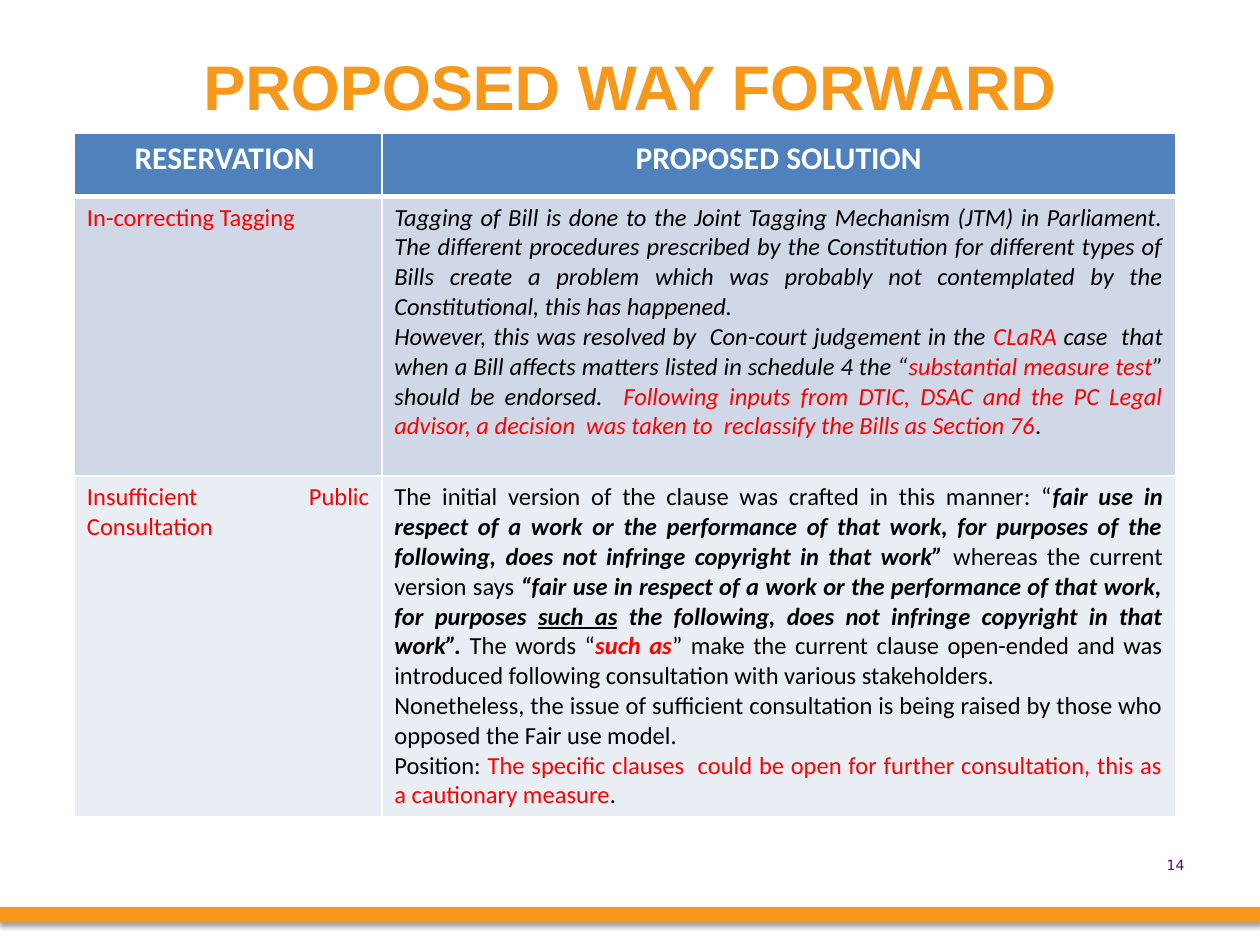
import pptx
import pptx.util
import pptx.dml.color
import pptx.enum.shapes
import pptx.enum.text
import pptx.oxml
import pptx.oxml.ns

Inches = pptx.util.Inches
Pt = pptx.util.Pt
Align = pptx.enum.text.PP_ALIGN
Anchor = pptx.enum.text.MSO_ANCHOR
NS = pptx.oxml.ns.nsdecls("a")

COLORS = {
    "orange": "F5981B", "white": "FFFFFF", "black": "000000", "red": "FF0000",
    "purple": "660066", "head": "4F81BD", "dark": "D0D8E8", "light": "E9EDF4",
}


def color(name):
    return pptx.dml.color.RGBColor.from_string(COLORS[name])


def write(frame, paras, size, face, tint, align, bold=False):
    """Fill a frame; run marks: b bold, i italic, u underline, r red."""
    frame.word_wrap = True
    for n, runs in enumerate(paras):
        para = frame.paragraphs[0] if n == 0 else frame.add_paragraph()
        para.alignment = align
        para.font.size = Pt(size)
        para.font.name = face
        para.font.bold = bold
        para.font.color.rgb = color(tint)
        for text, marks in runs:
            run = para.add_run()
            run.text = text
            font = run.font
            font.size = Pt(size)
            font.name = face
            font.bold = bold or "b" in marks
            font.italic = "i" in marks
            font.underline = "u" in marks
            font.color.rgb = color("red" if "r" in marks else tint)


deck = pptx.Presentation()
deck.slide_width = Inches(10)
deck.slide_height = Inches(7.5)
slide = deck.slides.add_slide(deck.slide_layouts[6])
shapes = slide.shapes

# Footer bar with a soft shadow
bar = shapes.add_shape(pptx.enum.shapes.MSO_SHAPE.RECTANGLE,
                       Inches(0), Inches(7.2), Inches(10), Inches(0.12))
bar.fill.solid()
bar.fill.fore_color.rgb = color("orange")
bar.line.fill.background()
bar.shadow.inherit = False
glow = bar.element.spPr.find(pptx.oxml.ns.qn("a:effectLst"))
glow.append(pptx.oxml.parse_xml(
    f'<a:outerShdw {NS} blurRad="{Pt(3.1)}" dist="{Pt(1.6)}" dir="5400000" '
    f'rotWithShape="0"><a:srgbClr val="{COLORS["black"]}">'
    '<a:alpha val="38000"/></a:srgbClr></a:outerShdw>'))

# Title
title = shapes.add_textbox(Inches(0.5), Inches(0.29), Inches(9), Inches(0.78))
title.text_frame.vertical_anchor = Anchor.MIDDLE
write(title.text_frame, [[("PROPOSED WAY FORWARD", "")]],
      36, "Arial", "orange", Align.CENTER, True)

# Table text: rows of cells, cells of paragraphs, paragraphs of runs
rows = [
    [[[("RESERVATION ", "")]], [[("PROPOSED SOLUTION", "")]]],
    [
        [[("In-correcting Tagging ", "r")]],
        [
            [("Tagging of Bill is done to the Joint Tagging Mechanism (JTM) in "
              "Parliament. The different procedures prescribed by the Constitution "
              "for different types of Bills create a problem which was probably not "
              "contemplated by the Constitutional, this has happened.  ", "i")],
            [("However, this was resolved by  Con-court judgement in the ", "i"),
             ("CLaRA", "ir"),
             (" case  that when a Bill affects matters listed in schedule 4 the “", "i"),
             ("substantial measure test", "ir"),
             ("” should be endorsed.  ", "i"),
             ("Following inputs from DTIC, DSAC and the PC Legal advisor, a decision  "
              "was taken to  reclassify the Bills as Section 76", "ir"),
             (". ", "i")],
        ],
    ],
    [
        [[("Insufficient Public Consultation", "r")]],
        [
            [("The initial version of the clause was crafted in this manner: “", ""),
             ("fair use in respect of a work or the performance of that work, for "
              "purposes of the following, does not infringe copyright in that work” ",
              "bi"),
             ("whereas the current version says", ""),
             (" “fair use in respect of a work or the performance of that work, for "
              "purposes ", "bi"),
             ("such as", "biu"),
             (" the following, does not infringe copyright in that work”. ", "bi"),
             ("The words “", ""),
             ("such as", "bir"),
             ("” make the current clause open-ended and was introduced following "
              "consultation with various stakeholders. ", "")],
            [("Nonetheless, the issue of sufficient consultation is being raised by "
              "those who opposed the Fair use model. ", "")],
            [("Position: ", ""),
             ("The specific clauses  could be open for further consultation, this as "
              "a cautionary measure", "r"),
             (". ", "")],
        ],
    ],
]

# Table
widths = [2.44, 6.3]
heights = [0.5, 2.22, 2.7]
fills = ["head", "dark", "light"]
grid = shapes.add_table(len(rows), len(widths), Inches(0.59), Inches(1.06),
                        Inches(sum(widths)), Inches(sum(heights))).table
for col, width in zip(grid.columns, widths):
    col.width = Inches(width)
for r, cells in enumerate(rows):
    grid.rows[r].height = Inches(heights[r])
    head = r == 0
    for c, paras in enumerate(cells):
        cell = grid.cell(r, c)
        write(cell.text_frame, paras, 18 if head else 14, "Calibri",
              "white" if head else "black",
              Align.CENTER if head else Align.JUSTIFY, head)
        # White borders, thicker under the header
        props = cell._tc.get_or_add_tcPr()
        for side in "LRTB":
            thick = (r, side) in [(0, "B"), (1, "T")]
            props.append(pptx.oxml.parse_xml(
                f'<a:ln{side} {NS} w="{Pt(3 if thick else 1)}"><a:solidFill>'
                f'<a:srgbClr val="{COLORS["white"]}"/></a:solidFill></a:ln{side}>'))
        cell.fill.solid()
        cell.fill.fore_color.rgb = color(fills[r])

# Page number
page = shapes.add_textbox(Inches(8.94), Inches(6.75), Inches(0.56), Inches(0.4))
write(page.text_frame, [[("14", "")]], 8, "DejaVu Sans", "purple", Align.RIGHT)

deck.save("out.pptx")
